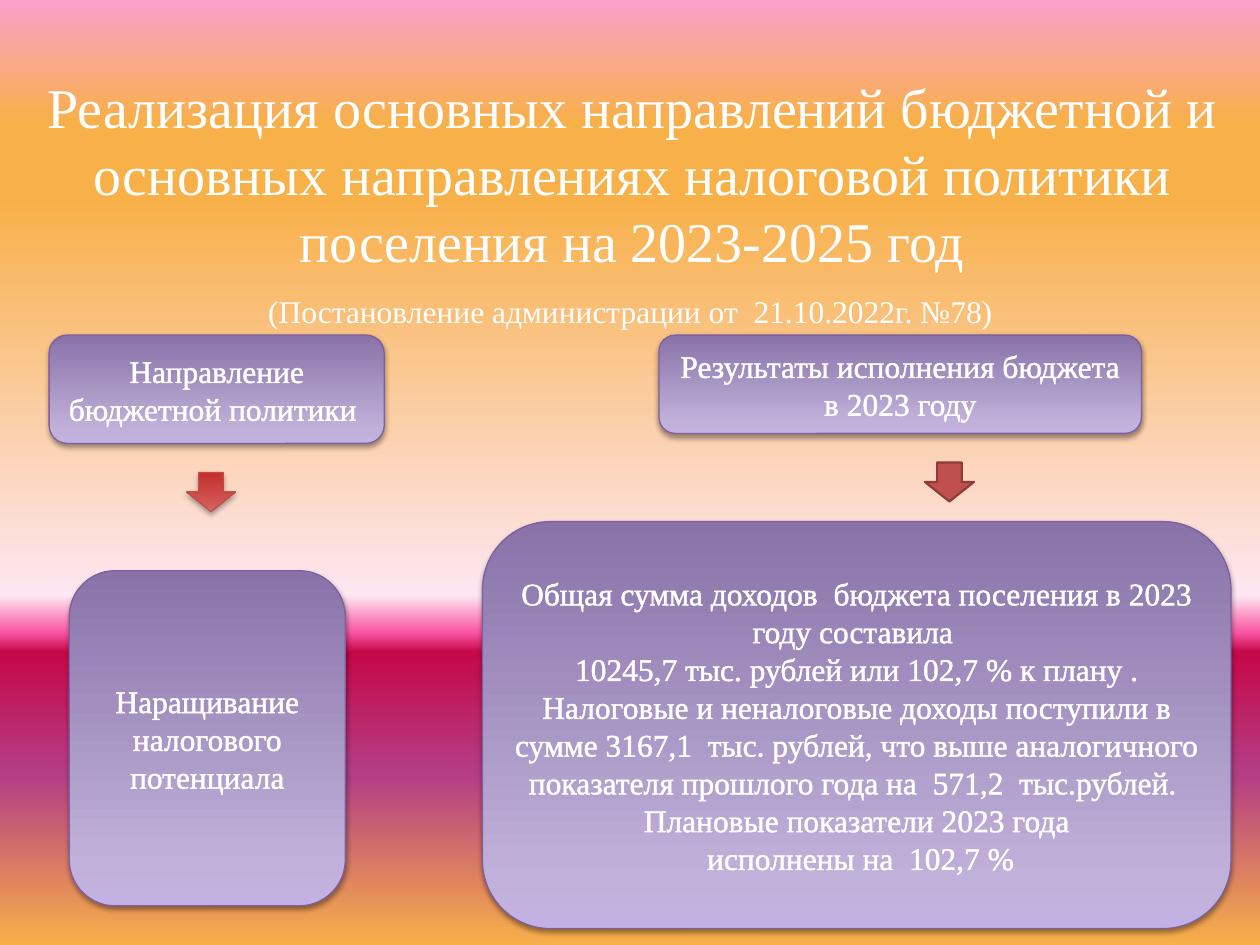
from lxml import etree
from pptx import Presentation
from pptx.dml.color import RGBColor
from pptx.enum.shapes import MSO_SHAPE
from pptx.enum.text import MSO_ANCHOR, PP_ALIGN
from pptx.oxml.ns import qn
from pptx.util import Inches, Pt

ROUNDED = MSO_SHAPE.ROUNDED_RECTANGLE
DOWN_ARROW = MSO_SHAPE.DOWN_ARROW
MIDDLE, TOP = MSO_ANCHOR.MIDDLE, MSO_ANCHOR.TOP
CENTER, LEFT = PP_ALIGN.CENTER, PP_ALIGN.LEFT

COLORS = {
    "text": "FFFFFF", "shadow": "000000",
    "panel_line": "7D60A0", "arrow_line": "BF4C48",
    "flat_arrow": "C0504D", "flat_arrow_line": "8E3B39",
}
GRADIENTS = {
    "background": [(0, "FC9FCB"), (13, "F8B049"), (21, "F8B049"), (63, "FEE7F2"),
                   (67, "F952A0"), (69, "C50849"), (82, "B43E85"), (100, "F8B049")],
    "panel": [(0, "C4B1E3"), (12, "C1B1DA"), (100, "8872A8")],
    "arrow": [(0, "E37F7D"), (12, "D35B59"), (100, "C32F2B")],
}


def add_color(parent, color):
    return etree.SubElement(parent, qn("a:srgbClr"), val=color)


class SlideBuilder:
    font_name = "Times New Roman"
    text_outline = 0.83

    def __init__(self, slide):
        self.slide = slide

    def gradient(self, fill, owner, name, angle):
        """Fill with named stops; the angle runs clockwise."""
        fill.gradient()
        gradient = owner.find(".//" + qn("a:gradFill"))
        stops = gradient.find(qn("a:gsLst"))
        for stop in list(stops):
            stops.remove(stop)
        for position, color in GRADIENTS[name]:
            add_color(etree.SubElement(stops, qn("a:gs"), pos=str(position * 1000)), color)
        gradient.find(qn("a:lin")).set("ang", str(angle * 60000))

    def background(self):
        self.gradient(self.slide.background.fill, self.slide._element, "background", 90)

    def shadow(self, shape, opacity, distance):
        effects = shape._element.spPr.find(qn("a:effectLst"))
        outer = etree.SubElement(
            effects, qn("a:outerShdw"), blurRad=str(Pt(3.1)), dist=str(Pt(distance)),
            dir="5400000", rotWithShape="0")
        color = add_color(outer, COLORS["shadow"])
        etree.SubElement(color, qn("a:alpha"), val=str(opacity * 1000))

    def fill_text(self, shape, paragraphs, size, align=CENTER, anchor=MIDDLE, outlined=False):
        frame = shape.text_frame
        frame.word_wrap = True
        frame.vertical_anchor = anchor
        font_format = {"name": self.font_name, "size": Pt(size)}
        for index, text in enumerate(paragraphs):
            paragraph = frame.add_paragraph() if index else frame.paragraphs[0]
            paragraph.alignment = align
            run = paragraph.add_run()
            run.text = text
            for attribute, value in font_format.items():
                setattr(run.font, attribute, value)
            run.font.color.rgb = RGBColor.from_string(COLORS["text"])
            if outlined:
                outline = etree.Element(qn("a:ln"), w=str(Pt(self.text_outline)))
                add_color(etree.SubElement(outline, qn("a:solidFill")), COLORS["text"])
                run._r.get_or_add_rPr().insert(0, outline)

    def text(self, box, content, size, align=CENTER, anchor=MIDDLE):
        shape = self.slide.shapes.add_textbox(*map(Inches, box))
        self.fill_text(shape, [content], size, align, anchor)

    def shape(self, kind, box, line, width):
        shape = self.slide.shapes.add_shape(kind, *map(Inches, box))
        shape.shadow.inherit = False
        shape.line.color.rgb = RGBColor.from_string(COLORS[line])
        shape.line.width = Pt(width)
        return shape

    def panel(self, box, paragraphs):
        shape = self.shape(ROUNDED, box, "panel_line", 0.75)
        self.gradient(shape.fill, shape._element, "panel", 270)
        self.shadow(shape, 38, 1.6)
        self.fill_text(shape, paragraphs, 18, outlined=True)

    def shaded_arrow(self, box):
        shape = self.shape(DOWN_ARROW, box, "arrow_line", 0.75)
        self.gradient(shape.fill, shape._element, "arrow", 270)
        self.shadow(shape, 35, 1.8)

    def flat_arrow(self, box):
        shape = self.shape(DOWN_ARROW, box, "flat_arrow_line", 1.25)
        shape.fill.solid()
        shape.fill.fore_color.rgb = RGBColor.from_string(COLORS["flat_arrow"])


def main():
    presentation = Presentation()
    presentation.slide_width, presentation.slide_height = Inches(10), Inches(7.5)
    builder = SlideBuilder(presentation.slides.add_slide(presentation.slide_layouts[6]))
    builder.background()

    # Title and decree reference
    builder.text((0.27, 0.49, 9.5, 1.77),
                 "Реализация основных направлений бюджетной и основных направлениях "
                 "налоговой политики поселения на 2023-2025 год", 32)
    builder.text((2.03, 2.27, 7.19, 0.4),
                 "(Постановление администрации от  21.10.2022г. №78)", 18, LEFT, TOP)

    # Column headings, then the content below them
    panels = [
        ((0.39, 2.66, 2.66, 0.86), ["Направление бюджетной политики "]),
        ((5.23, 2.66, 3.83, 0.78), ["Результаты исполнения бюджета в 2023 году"]),
        ((0.55, 4.53, 2.19, 2.66), ["Наращивание налогового потенциала"]),
        ((3.83, 4.14, 5.94, 3.23), [
            "Общая сумма доходов  бюджета поселения в 2023 году составила ",
            "10245,7 тыс. рублей или 102,7 % к плану . Налоговые и неналоговые доходы "
            "поступили в сумме 3167,1  тыс. рублей, что выше аналогичного показателя "
            "прошлого года на  571,2  тыс.рублей. ",
            "Плановые показатели 2023 года",
            " исполнены на  102,7 %",
        ]),
    ]
    for box, paragraphs in panels:
        builder.panel(box, paragraphs)

    # Arrows from headings to content
    builder.shaded_arrow((1.48, 3.75, 0.39, 0.31))
    builder.flat_arrow((7.34, 3.67, 0.39, 0.31))

    presentation.save("out.pptx")


if __name__ == "__main__":
    main()
